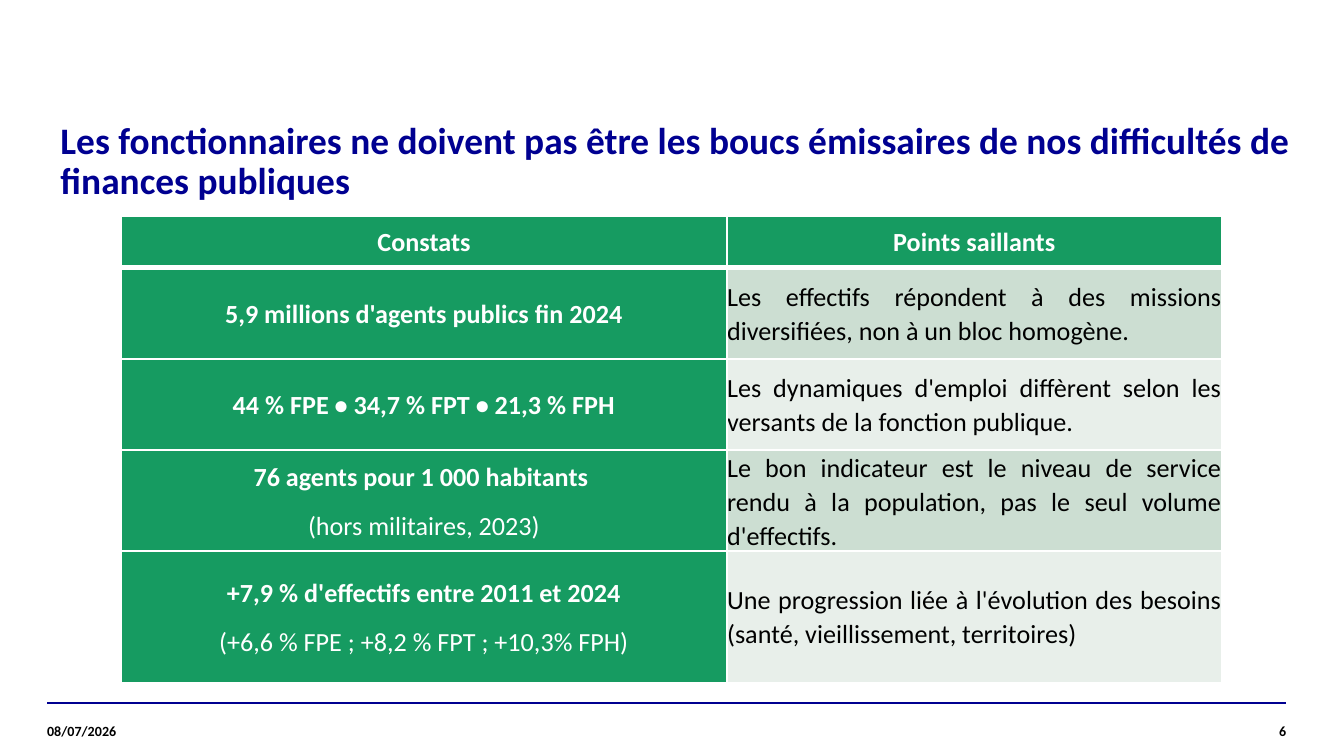
from lxml import etree
from pptx import Presentation
from pptx.dml.color import RGBColor as RGB
from pptx.enum.shapes import MSO_CONNECTOR as Conn
from pptx.enum.text import MSO_ANCHOR as Anchor, MSO_AUTO_SIZE as Auto, PP_ALIGN as Align
from pptx.oxml import parse_xml
from pptx.oxml.ns import nsdecls, qn
from pptx.util import Inches, Pt

NAVY, GREEN, WHITE, BLACK = "000091", "169B61", "FFFFFF", "000000"


def color(code):
    return RGB.from_string(code)


def write(par, text, size, code, bold, **form):
    for key, val in form.items():
        setattr(par, key, val)
    run = par.add_run()
    run.text = text
    look = {"name": "Calibri", "size": Pt(size), "bold": bold}
    for key, val in look.items():
        setattr(run.font, key, val)
    run.font.color.rgb = color(code)


# Widescreen 16:9 slide
deck = Presentation()
deck.slide_width, deck.slide_height = Inches(10), Inches(10 * 9 / 16)
slide = deck.slides.add_slide(deck.slide_layouts[5])
shapes = slide.shapes
middle = {"vertical_anchor": Anchor.MIDDLE, "margin_left": 0, "margin_right": 0,
          "margin_top": 0, "margin_bottom": 0}

# Footer rule
rule = shapes.add_connector(Conn.STRAIGHT, Inches(0.35), Inches(5.23),
                            Inches(9.57), Inches(5.23))
rule.line.color.rgb = color(NAVY)
rule.line.width = Pt(0.8)
etree.SubElement(rule._element.spPr, qn("a:effectLst"))

# Page number and date
for text, left, top, width, height, side in [
    ("6", 8.09, 5.24, 1.48, 0.39, Align.RIGHT),
    ("08/07/2026", 0.35, 5.25, 1.32, 0.38, Align.LEFT),
]:
    box = shapes.add_textbox(Inches(left), Inches(top), Inches(width), Inches(height))
    frame = box.text_frame
    frame.word_wrap = True
    for key, val in middle.items():
        setattr(frame, key, val)
    write(frame.paragraphs[0], text, 7.5, BLACK, True, alignment=side)

# Title
title = shapes.title
place = {"left": 0.43, "top": 0.86, "width": 9.21, "height": 0.71}
for key, val in place.items():
    setattr(title, key, Inches(val))
frame = title.text_frame
form = {"word_wrap": True, "auto_size": Auto.SHAPE_TO_FIT_TEXT,
        "vertical_anchor": Anchor.TOP, "margin_left": 0, "margin_right": 0,
        "margin_top": Inches(0.05), "margin_bottom": Inches(0.05)}
for key, val in form.items():
    setattr(frame, key, val)
par = frame.paragraphs[0]
par._p.get_or_add_pPr().set("marL", str(Inches(0.02)))
write(par, "Les fonctionnaires ne doivent pas être les boucs émissaires de nos "
      "difficultés de finances publiques", 20, NAVY, True,
      alignment=Align.LEFT, line_spacing=0.9, space_before=Pt(0))

# Table: each cell is a list of paragraphs
rows = [
    (["Constats"], ["Points saillants"]),
    (["5,9 millions d'agents publics fin 2024"],
     ["Les effectifs répondent à des missions diversifiées, non à un bloc homogène."]),
    (["44 % FPE • 34,7 % FPT • 21,3 % FPH"],
     ["Les dynamiques d'emploi diffèrent selon les versants de la fonction publique."]),
    (["76 agents pour 1 000 habitants ", "(hors militaires, 2023)"],
     ["Le bon indicateur est le niveau de service rendu à la population, "
      "pas le seul volume d'effectifs."]),
    (["+7,9 % d'effectifs entre 2011 et 2024", "(+6,6 % FPE ; +8,2 % FPT ; +10,3% FPH)"],
     ["Une progression liée à l'évolution des besoins (santé, vieillissement, territoires)"]),
]
grid = shapes.add_table(len(rows), 2, Inches(0.9), Inches(1.61),
                        Inches(8.19), Inches(3.53)).table
for col, width in zip(grid.columns, [4.51, 3.68]):
    col.width = Inches(width)
for row, height in zip(grid.rows, [0.38, 0.68, 0.68, 0.68, 0.98]):
    row.height = Inches(height)

for r, row in enumerate(rows):
    for c, texts in enumerate(row):
        cell = grid.cell(r, c)
        green = r == 0 or c == 0
        for key, val in middle.items():
            setattr(cell, key, val)

        # White borders, thick under the header
        props = cell._tc.get_or_add_tcPr()
        for edge in "LRTB":
            thick = (r, edge) in [(0, "B"), (1, "T")]
            props.append(parse_xml(
                f'<a:ln{edge} {nsdecls("a")} w="{Pt(3 if thick else 1)}"><a:solidFill>'
                f'<a:srgbClr val="{WHITE}"/></a:solidFill></a:ln{edge}>'))
        cell.fill.solid()
        band = "CCDED2" if r % 2 else "E8EFEA"
        cell.fill.fore_color.rgb = color(GREEN if green else band)

        for n, text in enumerate(texts):
            frame = cell.text_frame
            par = frame.add_paragraph() if n else frame.paragraphs[0]
            write(par, text, 14, WHITE if green else BLACK, green and n == 0,
                  alignment=Align.CENTER if green else Align.JUSTIFY,
                  line_spacing=1.07, space_after=Pt(8))

deck.save("out.pptx")
